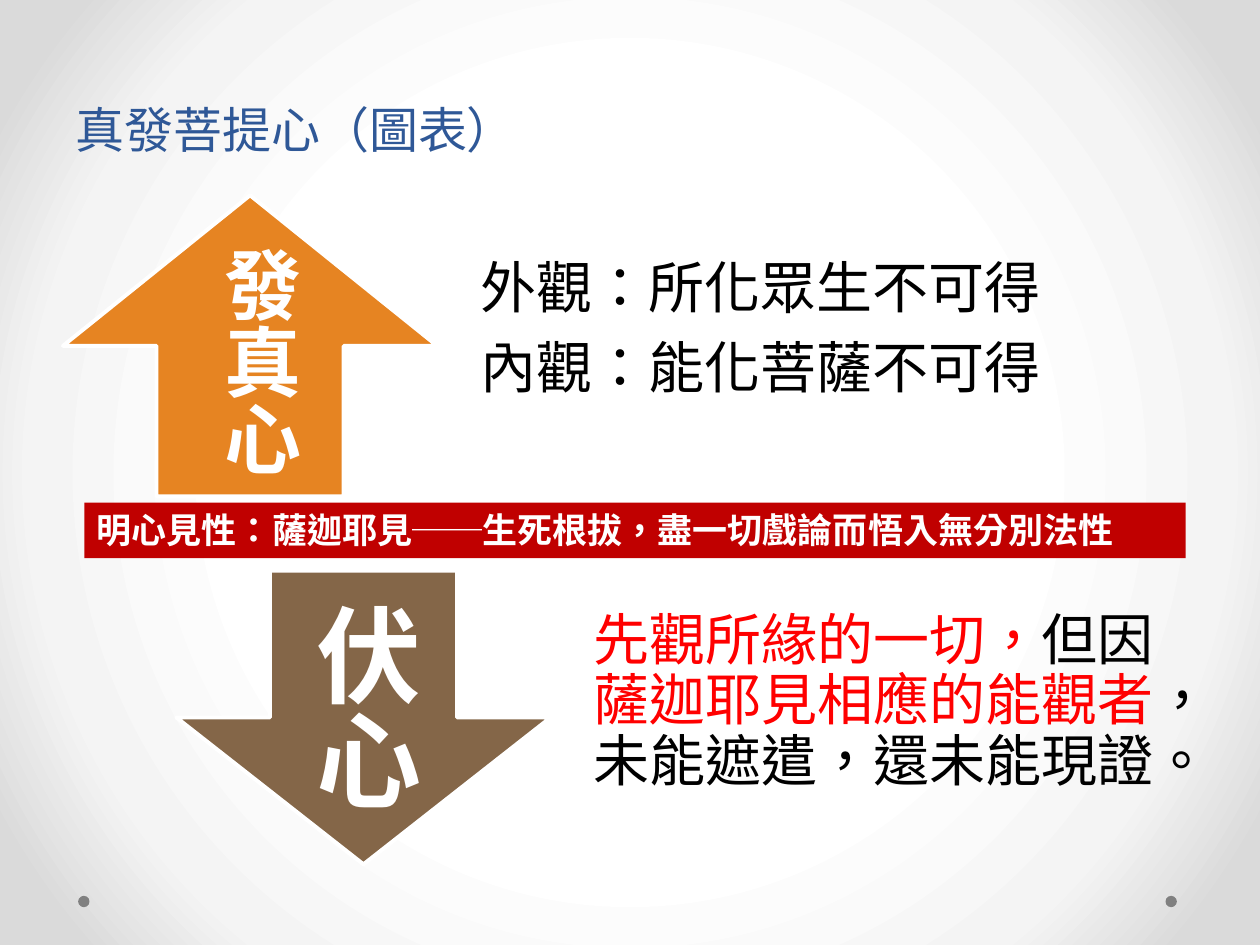
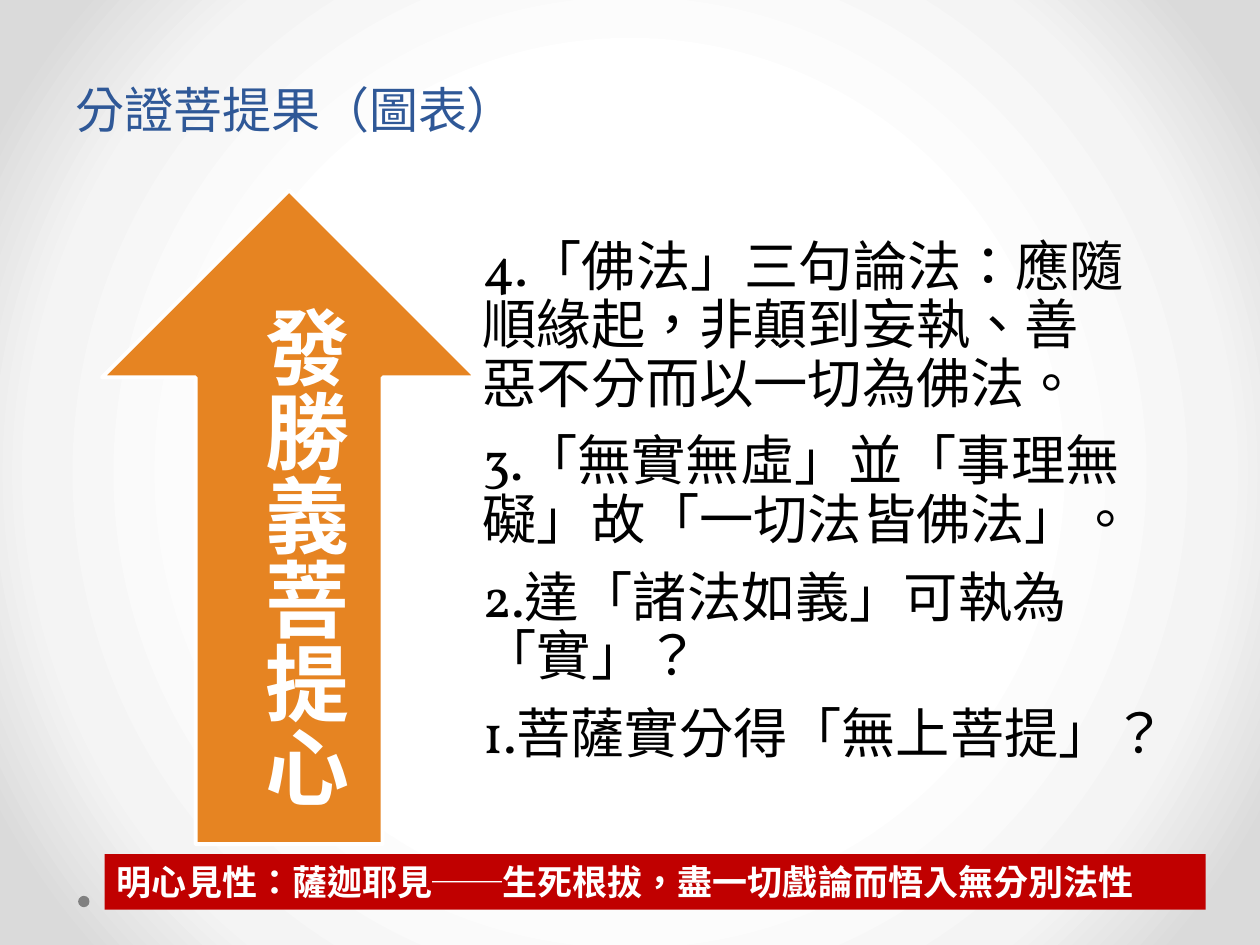
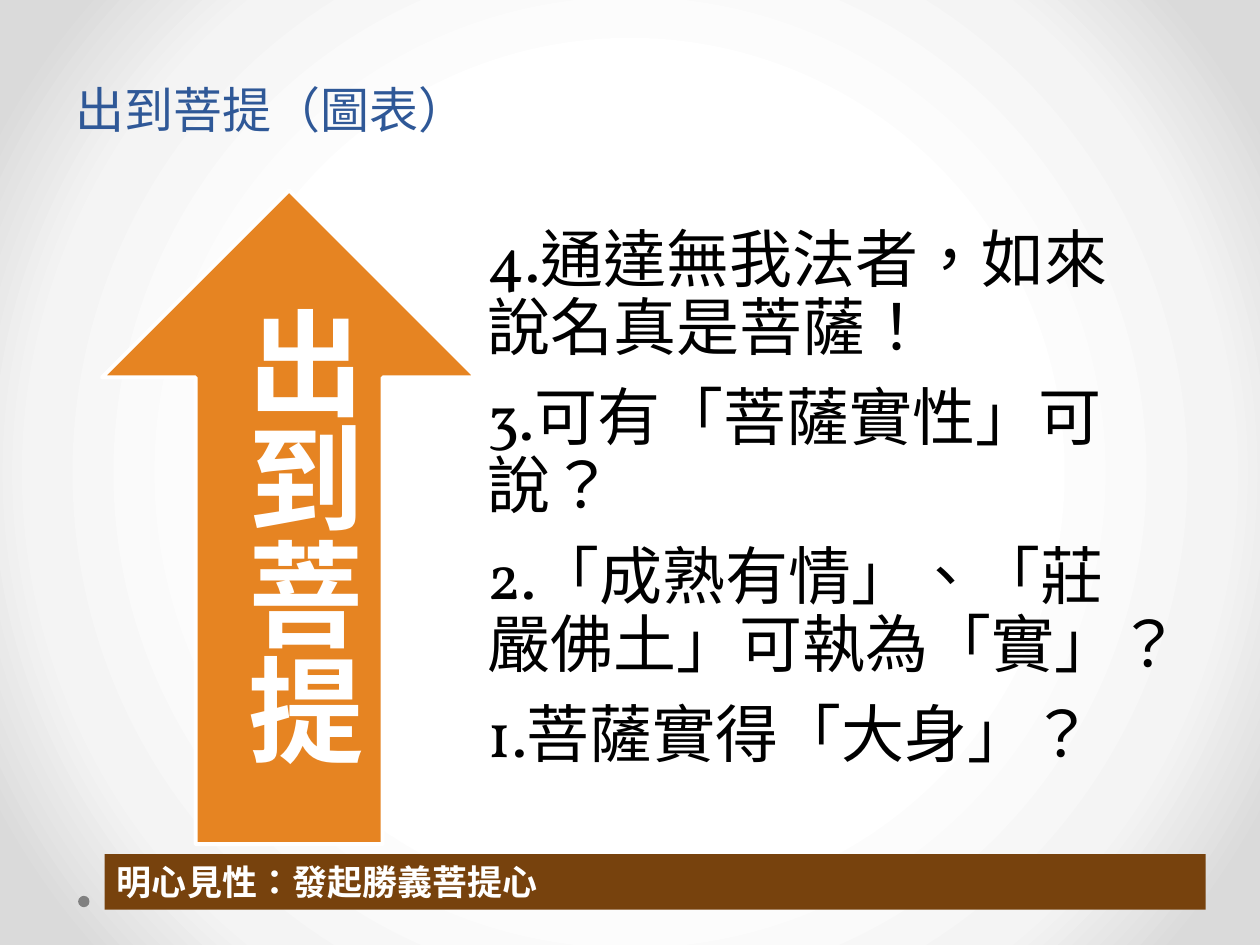
from dataclasses import dataclass

from lxml import etree
from pptx import Presentation
from pptx.dml.color import RGBColor
from pptx.enum.lang import MSO_LANGUAGE_ID
from pptx.enum.shapes import MSO_SHAPE
from pptx.enum.text import MSO_ANCHOR, MSO_AUTO_SIZE, PP_ALIGN
from pptx.oxml.ns import qn
from pptx.presentation import Presentation as Deck
from pptx.shapes.base import BaseShape
from pptx.slide import Slide
from pptx.text.text import TextFrame
from pptx.util import Inches, Length, Pt

UP, DOWN = MSO_SHAPE.UP_ARROW, MSO_SHAPE.DOWN_ARROW
RECTANGLE, OVAL = MSO_SHAPE.RECTANGLE, MSO_SHAPE.OVAL
TOP, MIDDLE, BOTTOM = MSO_ANCHOR.TOP, MSO_ANCHOR.MIDDLE, MSO_ANCHOR.BOTTOM
NO_FIT, GROW = MSO_AUTO_SIZE.NONE, MSO_AUTO_SIZE.SHAPE_TO_FIT_TEXT
LEFT = PP_ALIGN.LEFT
CHINESE = MSO_LANGUAGE_ID.TRADITIONAL_CHINESE

FONT = "Vollkorn"
COLORS = {
    "title": "2F5897",
    "text": "000000",
    "emphasis": "FF0000",
    "white": "FFFFFF",
    "orange": "E68422",
    "brown": "846648",
    "red": "C00000",
    "dark_brown": "77420D",
    "dot": "808080",
}
BACKGROUND_STOPS = ((50, "FFFFFF"), (76, "F4F4F4"), (92, "DADADA"))
TWO_CONTENT, ONE_CONTENT = 3, 1
LEFT_DOT, RIGHT_DOT = 0.62, 9.25
INSIGHT = "明心見性：薩迦耶見──生死根拔，盡一切戲論而悟入無分別法性"

Box = tuple[float, float, float, float]
Run = tuple[str, str]


@dataclass(frozen=True)
class Arrow:
    kind: MSO_SHAPE
    color: str
    box: Box
    label: str
    label_box: Box
    label_size: int


@dataclass(frozen=True)
class Body:
    box: Box
    size: int
    inset: float
    paragraphs: tuple[tuple[Run, ...], ...]


@dataclass(frozen=True)
class Band:
    left: float
    top: float
    color: str
    text: str


@dataclass(frozen=True)
class Page:
    title: str
    title_height: float
    layout: int
    arrows: tuple[Arrow, ...]
    bodies: tuple[Body, ...]
    band: Band
    dots: tuple[float, ...] = (LEFT_DOT,)


def plain(*lines: str) -> tuple[tuple[Run, ...], ...]:
    return tuple(((line, "text"),) for line in lines)


def tall_page(title: str, label: str, label_box: Box, label_size: int,
              body_size: int, inset: float, lines: tuple[str, ...],
              band_color: str, band_text: str) -> Page:
    return Page(
        title, 1.15, ONE_CONTENT,
        (Arrow(UP, "orange", (0.81, 1.51, 2.97, 5.19), label, label_box, label_size),),
        (Body((3.59, 1.15, 5.6, 5.91), body_size, inset, plain(*lines)),),
        Band(0.83, 6.78, band_color, band_text),
    )


PAGES = (
    Page(
        "真發菩提心（圖表）", 1.31, TWO_CONTENT,
        (
            Arrow(UP, "orange", (0.5, 1.55, 2.97, 2.39),
                  "發真心", (1.54, 1.86, 0.94, 2.13), 44),
            Arrow(DOWN, "brown", (1.4, 4.53, 2.97, 2.33),
                  "伏心", (2.24, 4.69, 1.21, 1.89), 60),
        ),
        (
            Body((3.56, 1.39, 5.04, 2.72), 32, 0.25,
                 plain("外觀：所化眾生不可得", "內觀：能化菩薩不可得")),
            Body((4.46, 4.34, 5.04, 2.72), 32, 0.25, ((
                ("先觀所緣的一切，", "emphasis"),
                ("但因", "text"),
                ("薩迦耶見相應的能觀者", "emphasis"),
                ("，未能遮遣，還未能現證。", "text"),
            ),)),
        ),
        Band(0.67, 3.99, "red", INSIGHT),
        (LEFT_DOT, RIGHT_DOT),
    ),
    tall_page(
        "分證菩提果（圖表）", "發勝義菩提心", (1.86, 2.33, 1.01, 4.25), 48, 31, 0.24,
        (
            "4.「佛法」三句論法：應隨順緣起，非顛到妄執、善惡不分而以一切為佛法。",
            "3.「無實無虛」並「事理無礙」故「一切法皆佛法」。",
            "2.達「諸法如義」可執為「實」？",
            "1.菩薩實分得「無上菩提」？",
        ),
        "red", INSIGHT,
    ),
    tall_page(
        "出到菩提（圖表）", "出到菩提", (1.69, 2.33, 1.31, 4.25), 66, 36, 0.28,
        (
            "4.通達無我法者，如來說名真是菩薩！",
            "3.可有「菩薩實性」可說？",
            "2.「成熟有情」、「莊嚴佛土」可執為「實」？",
            "1.菩薩實得「大身」？",
        ),
        "dark_brown", "明心見性：發起勝義菩提心",
    ),
)


def inches(box: Box) -> list[Length]:
    return [Inches(value) for value in box]


def color(name: str) -> RGBColor:
    return RGBColor.from_string(COLORS[name])


def place(shape: BaseShape, box: Box) -> None:
    shape.left, shape.top, shape.width, shape.height = inches(box)


def write(frame: TextFrame, paragraphs: tuple[tuple[Run, ...], ...], *, size: int,
          bold: bool = False, anchor: MSO_ANCHOR = TOP, fit: MSO_AUTO_SIZE = NO_FIT,
          line_spacing: float | Length | None = None, space_after: float = 0) -> None:
    frame.word_wrap = True
    frame.auto_size = fit
    frame.vertical_anchor = anchor
    for index, runs in enumerate(paragraphs):
        paragraph = frame.add_paragraph() if index else frame.paragraphs[0]
        paragraph.alignment = LEFT
        paragraph.line_spacing = line_spacing
        paragraph.space_before = Pt(0)
        paragraph.space_after = Pt(space_after)
        for text, color_name in runs:
            run = paragraph.add_run()
            run.text = text
            run.font.size = Pt(size)
            run.font.bold = bold
            run.font.color.rgb = color(color_name)
            run.font.name = FONT
            run.font.language_id = CHINESE
            latin = run.font._element.find(qn("a:latin"))
            east_asian = etree.Element(qn("a:ea"), typeface=FONT)
            latin.addnext(east_asian)


def add_filled(slide: Slide, kind: MSO_SHAPE, box: Box, fill: str,
               outline: str | None = None) -> BaseShape:
    shape = slide.shapes.add_shape(kind, *inches(box))
    shape.shadow.inherit = False
    shape.fill.solid()
    shape.fill.fore_color.rgb = color(fill)
    if outline:
        shape.line.color.rgb = color(outline)
        shape.line.width = Pt(2.25)
    else:
        shape.line.fill.background()
    return shape


def add_arrow(slide: Slide, arrow: Arrow) -> None:
    add_filled(slide, arrow.kind, arrow.box, arrow.color, "white")
    label = slide.shapes.add_textbox(*inches(arrow.label_box))
    write(label.text_frame, (((arrow.label, "white"),),),
          size=arrow.label_size, bold=True, fit=GROW)
    label.text_frame._element.bodyPr.set("vert", "eaVert")


def fill_body(shape: BaseShape, body: Body) -> None:
    place(shape, body.box)
    frame = shape.text_frame
    frame.margin_left = frame.margin_right = frame.margin_bottom = Inches(body.inset)
    frame.margin_top = Inches(0)
    write(frame, body.paragraphs, size=body.size, anchor=MIDDLE,
          line_spacing=0.9, space_after=round(0.35 * body.size, 1))
    for paragraph in frame.paragraphs:
        properties = paragraph._p.get_or_add_pPr()
        properties.set("marL", "0")
        properties.set("indent", "0")
        etree.SubElement(properties, qn("a:buNone"))


def add_band(slide: Slide, band: Band) -> None:
    shape = add_filled(slide, RECTANGLE, (band.left, band.top, 8.74, 0.44), band.color)
    write(shape.text_frame, (((band.text, "white"),),), size=20, bold=True, fit=GROW)


def set_background(presentation: Deck) -> None:
    master = presentation.slide_master
    master.background.fill.gradient()
    gradient = next(master.element.iter(qn("a:gradFill")))
    for child in list(gradient):
        gradient.remove(child)
    stops = etree.SubElement(gradient, qn("a:gsLst"))
    for position, value in BACKGROUND_STOPS:
        stop = etree.SubElement(stops, qn("a:gs"), pos=str(position * 1000))
        etree.SubElement(stop, qn("a:srgbClr"), val=value)
    circle = etree.SubElement(gradient, qn("a:path"), path="circle")
    etree.SubElement(circle, qn("a:fillToRect"),
                     {side: "50000" for side in ("l", "t", "r", "b")})


def add_page(presentation: Deck, page: Page) -> None:
    slide = presentation.slides.add_slide(presentation.slide_layouts[page.layout])
    for left in page.dots:
        add_filled(slide, OVAL, (left, 7.11, 0.09, 0.09), "dot")
    title = slide.shapes.title
    place(title, (0.5, 0, 9, page.title_height))
    write(title.text_frame, (((page.title, "title"),),),
          size=28, anchor=BOTTOM, line_spacing=Pt(58))
    for index, body in enumerate(page.bodies, start=1):
        fill_body(slide.placeholders[index], body)
    for arrow in page.arrows:
        add_arrow(slide, arrow)
    add_band(slide, page.band)


def main() -> None:
    presentation = Presentation()
    presentation.slide_width = Inches(10)
    presentation.slide_height = Inches(7.5)
    set_background(presentation)
    for page in PAGES:
        add_page(presentation, page)
    presentation.save("out.pptx")


if __name__ == "__main__":
    main()
